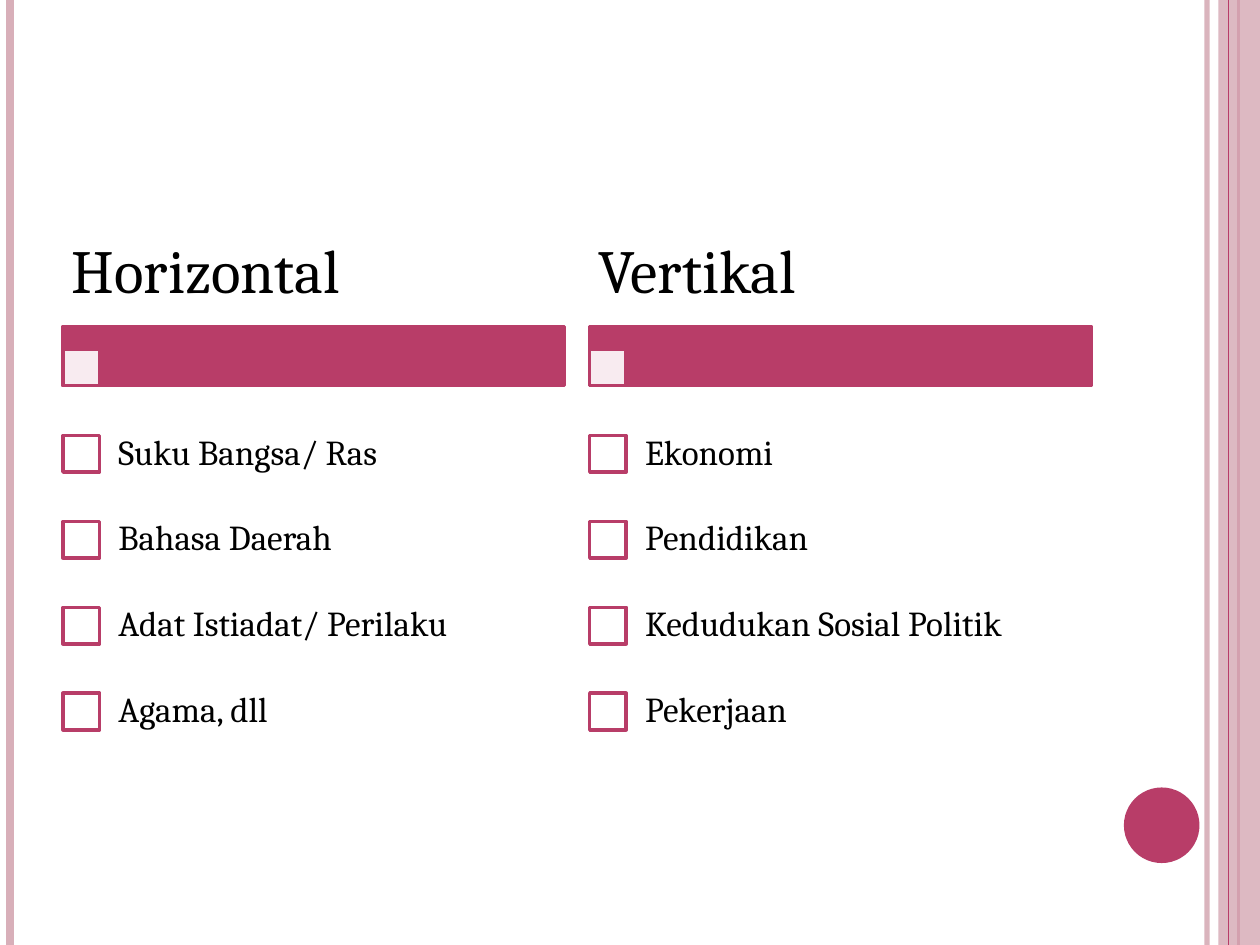
"""Build a slide that lists horizontal and vertical social differences."""
from lxml.etree import SubElement
from pptx import Presentation
from pptx.dml.color import RGBColor
from pptx.enum.shapes import MSO_CONNECTOR, MSO_SHAPE
from pptx.enum.text import MSO_ANCHOR
from pptx.oxml.ns import qn
from pptx.util import Inches, Pt

COLORS = {"accent": "B83D68", "pale": "D8AFB9", "white": "FFFFFF", "text": "000000"}

presentation = Presentation()
presentation.slide_width = Inches(10)
presentation.slide_height = Inches(7.5)
slide = presentation.slides.add_slide(presentation.slide_layouts[6])
column = presentation.slide_width / 100
row = presentation.slide_height / 75


def add_box(left, top, width, height, fill, kind=MSO_SHAPE.RECTANGLE, outlined=True, opacity=100):
    shape = slide.shapes.add_shape(
        kind, int(left * column), int(top * row), int(width * column), int(height * row))
    shape.shadow.inherit = False
    shape.fill.solid()
    shape.fill.fore_color.rgb = RGBColor.from_string(COLORS[fill])
    if opacity < 100:
        color = shape.fill._xPr.find(qn("a:solidFill"))[0]
        SubElement(color, qn("a:alpha"), val=str(opacity * 1000))
    if outlined:
        shape.line.color.rgb = RGBColor.from_string(COLORS["accent"])
        shape.line.width = Pt(2)
    else:
        shape.line.fill.background()


def add_text(text, left, top, width, height, size, inset_x, inset_y):
    shape = slide.shapes.add_textbox(
        int(left * column), int(top * row), int(width * column), int(height * row))
    frame = shape.text_frame
    frame.word_wrap = True
    frame.vertical_anchor = MSO_ANCHOR.MIDDLE
    frame.margin_left = frame.margin_right = int(inset_x * column)
    frame.margin_top = frame.margin_bottom = int(inset_y * row)
    paragraph = frame.paragraphs[0]
    paragraph.line_spacing = 0.9
    run = paragraph.add_run()
    run.text = text
    run.font.name = "Cambria"
    run.font.size = Pt(size)
    run.font.color.rgb = RGBColor.from_string(COLORS["text"])


stripes = [
    (95.8, "pale", 3, 93),
    (0.8, "pale", 4.5, 100),
    (98.3, "accent", 1.5, 100),
    (97.5, "accent", 0.75, 100),
]
for position, color_name, weight, opacity in stripes:
    if position == 97.5:
        add_box(96.7, 0, 3.3, 75, "pale", outlined=False, opacity=87)
    stripe = slide.shapes.add_connector(
        MSO_CONNECTOR.STRAIGHT, int(position * column), 0,
        int(position * column), presentation.slide_height)
    stripe.line.color.rgb = RGBColor.from_string(COLORS[color_name])
    stripe.line.width = Pt(weight)
    properties = stripe._element.spPr
    SubElement(properties, qn("a:effectLst"))
    if opacity < 100:
        color = properties.find(".//" + qn("a:srgbClr"))
        SubElement(color, qn("a:alpha"), val=str(opacity * 1000))

add_box(89.2, 62.5, 6, 6, "accent", kind=MSO_SHAPE.OVAL, outlined=False)

groups = {
    "Horizontal": ["Suku Bangsa/ Ras", "Bahasa Daerah", "Adat Istiadat/ Perilaku", "Agama, dll"],
    "Vertikal": ["Ekonomi", "Pendidikan", "Kedudukan Sosial Politik", "Pekerjaan"],
}
group_width, group_step = 39.8, 41.8
check_size, item_height = 2.9, 6.82

for group_index, (heading, items) in enumerate(groups.items()):
    left = 5 + group_index * group_step
    add_box(left, 25.9, group_width, 4.7, "accent")
    add_box(left, 27.7, check_size, check_size, "white", opacity=90)
    add_text(heading, left, 17.5, group_width, 8.4, size=35, inset_x=0.7, inset_y=0.5)
    for item_index, item in enumerate(items):
        top = 32.6 + item_index * item_height
        add_box(left, top + (item_height - check_size) / 2, check_size, check_size, "white")
        add_text(item, left + 2.8, top, group_width - 2.8, item_height,
                 size=20, inset_x=1.6, inset_y=1.6)

presentation.save("out.pptx")
